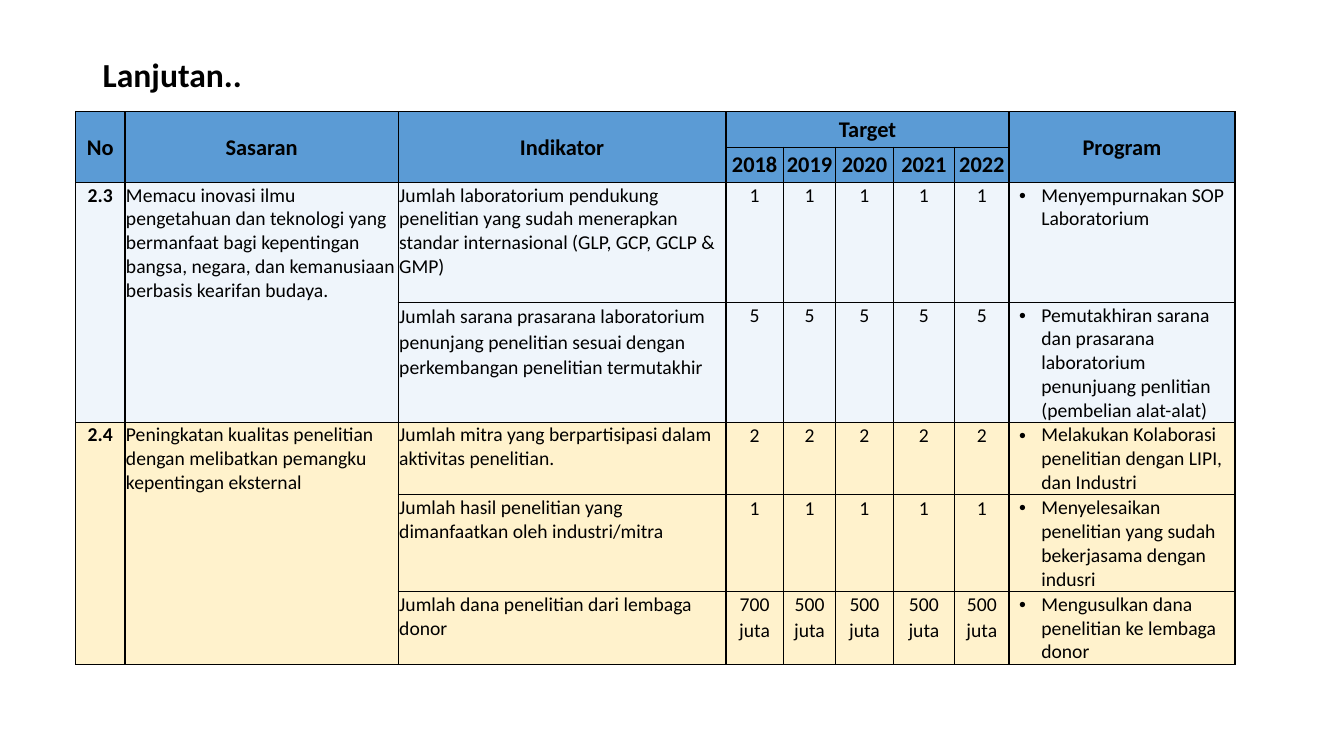
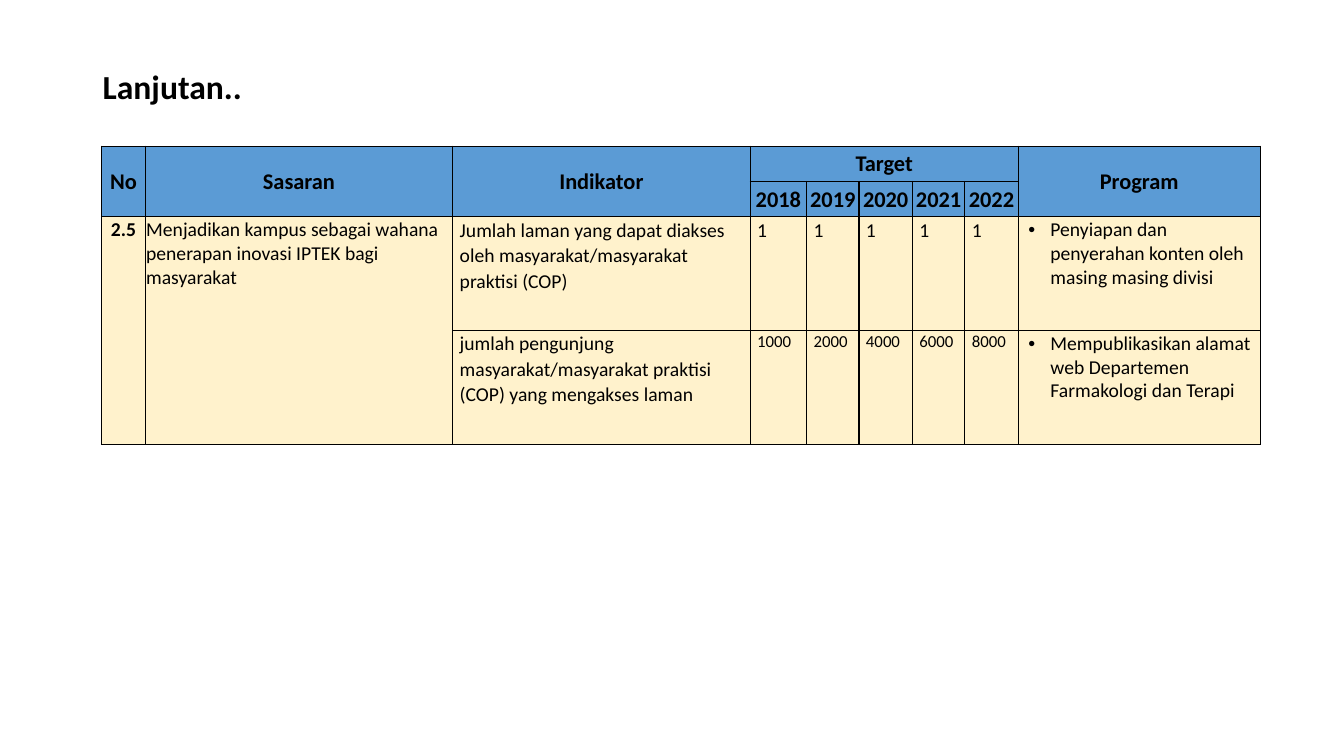
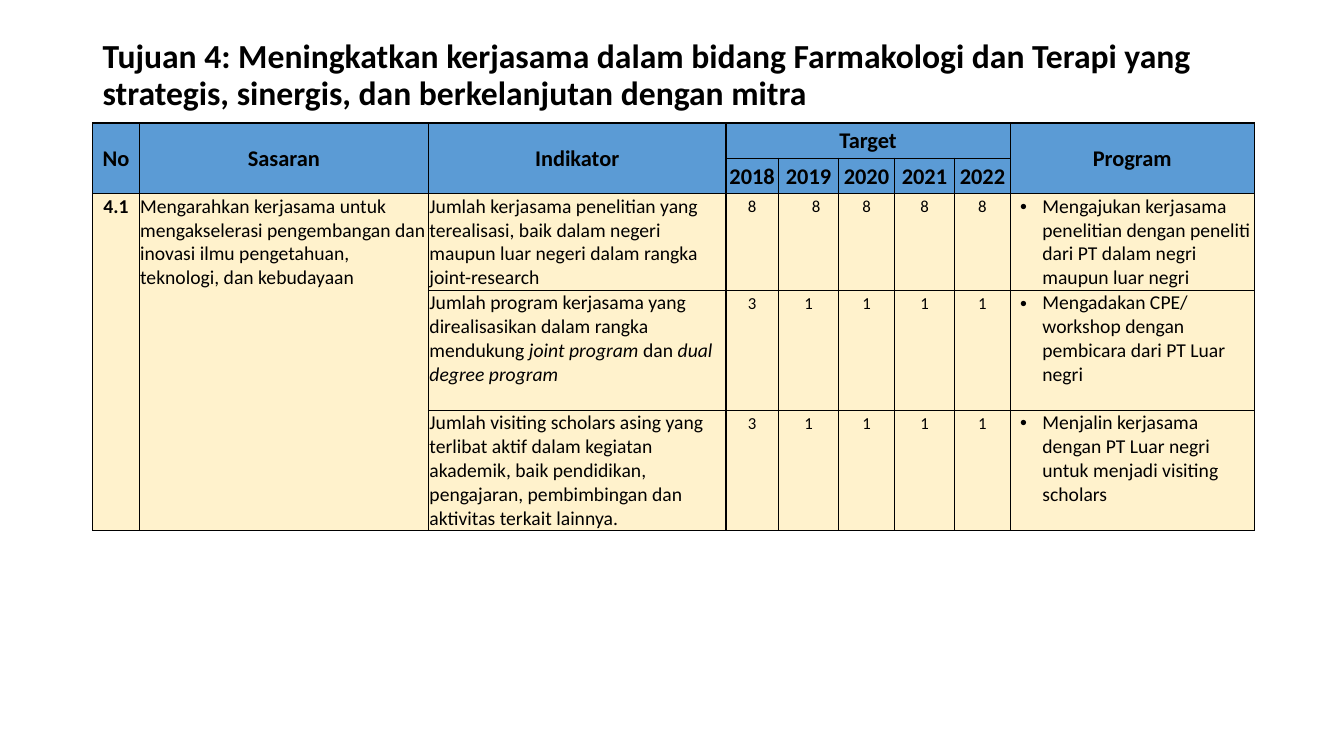
from dataclasses import dataclass, field, replace

from lxml.etree import SubElement
from pptx import Presentation
from pptx.dml.color import RGBColor
from pptx.enum.text import MSO_ANCHOR, PP_ALIGN
from pptx.oxml.ns import qn
from pptx.util import Inches, Pt

# Shared look
FONT = "Calibri"
BLACK, BLUE, PALE_BLUE, CREAM = "000000", "5B9BD5", "EFF5FB", "FFF2CC"
HEADER_HEIGHT = 0.35
YEARS = ("2018", "2019", "2020", "2021", "2022")
FIRST_YEAR, PROGRAM = 3, 8


@dataclass(frozen=True)
class CellStyle:
    size: int = 14
    bold: bool = False
    align: PP_ALIGN = PP_ALIGN.LEFT
    anchor: MSO_ANCHOR = MSO_ANCHOR.TOP
    margin_left: float = 0.01
    margin_right: float = 0.01
    margin_top: float = 0.01
    line_spacing: float = 1.0
    space_after: int = 0
    bullet: bool = False


PLAIN = CellStyle()
HEADER = CellStyle(size=16, bold=True, align=PP_ALIGN.CENTER, anchor=MSO_ANCHOR.MIDDLE)
NUMBER = CellStyle(bold=True, align=PP_ALIGN.CENTER)
BULLET = CellStyle(bullet=True)
LOOSE = CellStyle(line_spacing=1.07, space_after=8)
PADDED = replace(LOOSE, margin_left=0.07, margin_right=0.07, margin_top=0)
TARGET = replace(PADDED, align=PP_ALIGN.CENTER)
SMALL_PADDED = replace(PADDED, size=12)
SMALL_TARGET = CellStyle(size=12, align=PP_ALIGN.CENTER, margin_left=0.04,
                         margin_right=0.04, margin_top=0, line_spacing=1.15)
SHIFTED_TARGET = replace(SMALL_TARGET, margin_left=0.19)


@dataclass(frozen=True)
class Indicator:
    text: str  # parts between asterisks are italic
    targets: tuple[str, ...]
    program: str
    height: float
    text_style: CellStyle = PLAIN
    target_style: CellStyle = TARGET
    special_targets: dict[int, CellStyle] = field(default_factory=dict)


@dataclass(frozen=True)
class Goal:
    number: str
    text: str
    fill: str
    indicators: list[Indicator]


@dataclass(frozen=True)
class GoalSlide:
    title: str
    title_top: float
    left: float
    top: float
    columns: tuple[float, ...]
    goals: list[Goal]


# Content
SLIDES = [
    GoalSlide(
        "Lanjutan..", 0.4, 0.75, 1.11,
        (0.49, 2.71, 3.25, 0.57, 0.52, 0.57, 0.61, 0.54, 2.24),
        [
            Goal("2.3", "Memacu inovasi ilmu pengetahuan dan teknologi yang bermanfaat bagi "
                 "kepentingan bangsa, negara, dan kemanusiaan berbasis kearifan budaya.",
                 PALE_BLUE, [
                     Indicator("Jumlah laboratorium pendukung penelitian yang sudah menerapkan "
                               "standar internasional (GLP, GCP, GCLP & GMP)",
                               ("1",) * 5, "Menyempurnakan SOP Laboratorium", 1.19),
                     Indicator("Jumlah sarana prasarana laboratorium penunjang penelitian "
                               "sesuai dengan perkembangan penelitian termutakhir",
                               ("5",) * 5, "Pemutakhiran sarana dan prasarana laboratorium "
                               "penunjuang penlitian (pembelian alat-alat)", 1.19, LOOSE),
                 ]),
            Goal("2.4", "Peningkatan kualitas penelitian dengan melibatkan pemangku "
                 "kepentingan eksternal", CREAM, [
                     Indicator("Jumlah mitra yang berpartisipasi dalam aktivitas penelitian.",
                               ("2",) * 5, "Melakukan Kolaborasi penelitian dengan LIPI, "
                               "dan Industri", 0.72),
                     Indicator("Jumlah hasil penelitian yang dimanfaatkan oleh industri/mitra",
                               ("1",) * 5, "Menyelesaikan penelitian yang sudah bekerjasama "
                               "dengan indusri", 0.96),
                     Indicator("Jumlah dana penelitian dari lembaga donor",
                               ("700 juta",) + ("500 juta",) * 4,
                               "Mengusulkan dana penelitian ke lembaga donor", 0.72),
                 ]),
        ]),
    GoalSlide(
        "Lanjutan..", 0.52, 1.01, 1.45,
        (0.43, 3.05, 2.95, 0.56, 0.52, 0.53, 0.52, 0.53, 2.4),
        [
            Goal("2.5", "Menjadikan kampus sebagai wahana penerapan inovasi IPTEK bagi "
                 "masyarakat", CREAM, [
                     Indicator("Jumlah laman yang dapat diakses oleh masyarakat/masyarakat "
                               "praktisi (COP)", ("1",) * 5,
                               "Penyiapan dan penyerahan konten oleh masing masing divisi",
                               1.13, PADDED, PADDED),
                     Indicator("jumlah pengunjung masyarakat/masyarakat praktisi (COP) yang "
                               "mengakses laman", ("1000", "2000", "4000", "6000", "8000"),
                               "Mempublikasikan alamat web Departemen Farmakologi dan Terapi",
                               1.13, PADDED, SMALL_PADDED),
                 ]),
        ]),
    GoalSlide(
        "Tujuan 4: Meningkatkan kerjasama dalam bidang Farmakologi dan Terapi yang strategis, "
        "sinergis, dan berkelanjutan dengan mitra", 0.4, 0.92, 1.22,
        (0.46, 2.87, 2.95, 0.52, 0.6, 0.55, 0.6, 0.55, 2.42),
        [
            Goal("4.1", "Mengarahkan kerjasama untuk mengakselerasi pengembangan dan inovasi "
                 "ilmu pengetahuan, teknologi, dan kebudayaan", CREAM, [
                     Indicator("Jumlah kerjasama penelitian yang terealisasi, baik dalam negeri "
                               "maupun luar negeri dalam rangka joint-research", ("8",) * 5,
                               "Mengajukan kerjasama penelitian dengan peneliti dari PT dalam "
                               "negri maupun luar negri", 0.96, target_style=SMALL_TARGET,
                               special_targets={1: SHIFTED_TARGET}),
                     Indicator("Jumlah program kerjasama yang direalisasikan dalam rangka "
                               "mendukung *joint program *dan *dual degree program*",
                               ("3",) + ("1",) * 4,
                               "Mengadakan CPE/ workshop dengan pembicara dari PT Luar negri",
                               1.19, target_style=SMALL_TARGET),
                     Indicator("Jumlah visiting scholars asing yang terlibat aktif dalam "
                               "kegiatan akademik, baik pendidikan, pengajaran, pembimbingan "
                               "dan aktivitas terkait lainnya.", ("3",) + ("1",) * 4,
                               "Menjalin kerjasama dengan PT Luar negri untuk menjadi visiting "
                               "scholars", 1.19, target_style=SMALL_TARGET),
                 ]),
        ]),
]


def color(value: str) -> RGBColor:
    return RGBColor.from_string(value)


def add_run(paragraph, text: str, size: int, bold: bool, italic: bool = False) -> None:
    run = paragraph.add_run()
    run.text = text
    run.font.name = FONT
    run.font.size = Pt(size)
    run.font.bold = bold
    run.font.italic = italic
    run.font.color.rgb = color(BLACK)


def add_bullet(paragraph) -> None:
    properties = paragraph._p.get_or_add_pPr()
    properties.set("marL", str(Inches(0.31)))
    properties.set("indent", str(Inches(-0.22)))
    SubElement(properties, qn("a:buFont")).set("typeface", "Arial")
    SubElement(properties, qn("a:buChar")).set("char", "•")


def paint_cell(cell, fill: str) -> None:
    """Black border on all sides, then the fill."""
    properties = cell._tc.get_or_add_tcPr()
    for side in ("lnL", "lnR", "lnT", "lnB"):
        border = SubElement(properties, qn(f"a:{side}"))
        border.set("w", str(Pt(1)))
        SubElement(SubElement(border, qn("a:solidFill")), qn("a:srgbClr")).set("val", BLACK)
    cell.fill.solid()
    cell.fill.fore_color.rgb = color(fill)


def write_cell(cell, text: str, style: CellStyle) -> None:
    cell.margin_left = Inches(style.margin_left)
    cell.margin_right = Inches(style.margin_right)
    cell.margin_top = Inches(style.margin_top)
    cell.margin_bottom = 0
    cell.vertical_anchor = style.anchor
    paragraph = cell.text_frame.paragraphs[0]
    if style.bullet:
        add_bullet(paragraph)
    paragraph.alignment = style.align
    paragraph.line_spacing = style.line_spacing
    paragraph.space_after = Pt(style.space_after)
    for position, part in enumerate(text.split("*")):
        if part:
            add_run(paragraph, part, style.size, style.bold, italic=position % 2 == 1)


def add_title(slide, text: str, top: float) -> None:
    frame = slide.shapes.add_textbox(Inches(0.92), Inches(top),
                                     Inches(11.5), Inches(0.71)).text_frame
    frame.word_wrap = True
    frame.vertical_anchor = MSO_ANCHOR.MIDDLE
    paragraph = frame.paragraphs[0]
    paragraph.line_spacing = 0.9
    add_run(paragraph, text, 24, True)


def write_header(table) -> None:
    headings = {0: "No", 1: "Sasaran", 2: "Indikator", PROGRAM: "Program"}
    for column, heading in headings.items():
        table.cell(0, column).merge(table.cell(1, column))
        write_cell(table.cell(0, column), heading, HEADER)
    table.cell(0, FIRST_YEAR).merge(table.cell(0, PROGRAM - 1))
    write_cell(table.cell(0, FIRST_YEAR), "Target", HEADER)
    for column, year in enumerate(YEARS, FIRST_YEAR):
        write_cell(table.cell(1, column), year, HEADER)


def write_goal(table, goal: Goal, first_row: int) -> None:
    last_row = first_row + len(goal.indicators) - 1
    for column, (text, style) in enumerate([(goal.number, NUMBER), (goal.text, PLAIN)]):
        table.cell(first_row, column).merge(table.cell(last_row, column))
        write_cell(table.cell(first_row, column), text, style)
    for row, indicator in enumerate(goal.indicators, first_row):
        write_cell(table.cell(row, 2), indicator.text, indicator.text_style)
        for index, target in enumerate(indicator.targets):
            style = indicator.special_targets.get(index, indicator.target_style)
            write_cell(table.cell(row, FIRST_YEAR + index), target, style)
        write_cell(table.cell(row, PROGRAM), indicator.program, BULLET)


def add_goal_table(slide, content: GoalSlide) -> None:
    heights, fills = [HEADER_HEIGHT] * 2, [BLUE] * 2
    for goal in content.goals:
        heights += [indicator.height for indicator in goal.indicators]
        fills += [goal.fill] * len(goal.indicators)
    table = slide.shapes.add_table(
        len(heights), len(content.columns), Inches(content.left), Inches(content.top),
        Inches(sum(content.columns)), Inches(sum(heights))).table
    table.first_row = table.horz_banding = False
    for column, width in zip(table.columns, content.columns):
        column.width = Inches(width)
    for row, height, fill in zip(table.rows, heights, fills):
        row.height = Inches(height)
        for cell in row.cells:
            paint_cell(cell, fill)

    write_header(table)
    first_row = 2
    for goal in content.goals:
        write_goal(table, goal, first_row)
        first_row += len(goal.indicators)


def main() -> None:
    presentation = Presentation()
    presentation.slide_width = Inches(13.33)
    presentation.slide_height = Inches(7.5)
    for content in SLIDES:
        slide = presentation.slides.add_slide(presentation.slide_layouts[6])
        add_title(slide, content.title, content.title_top)
        add_goal_table(slide, content)
    presentation.save("out.pptx")


if __name__ == "__main__":
    main()
